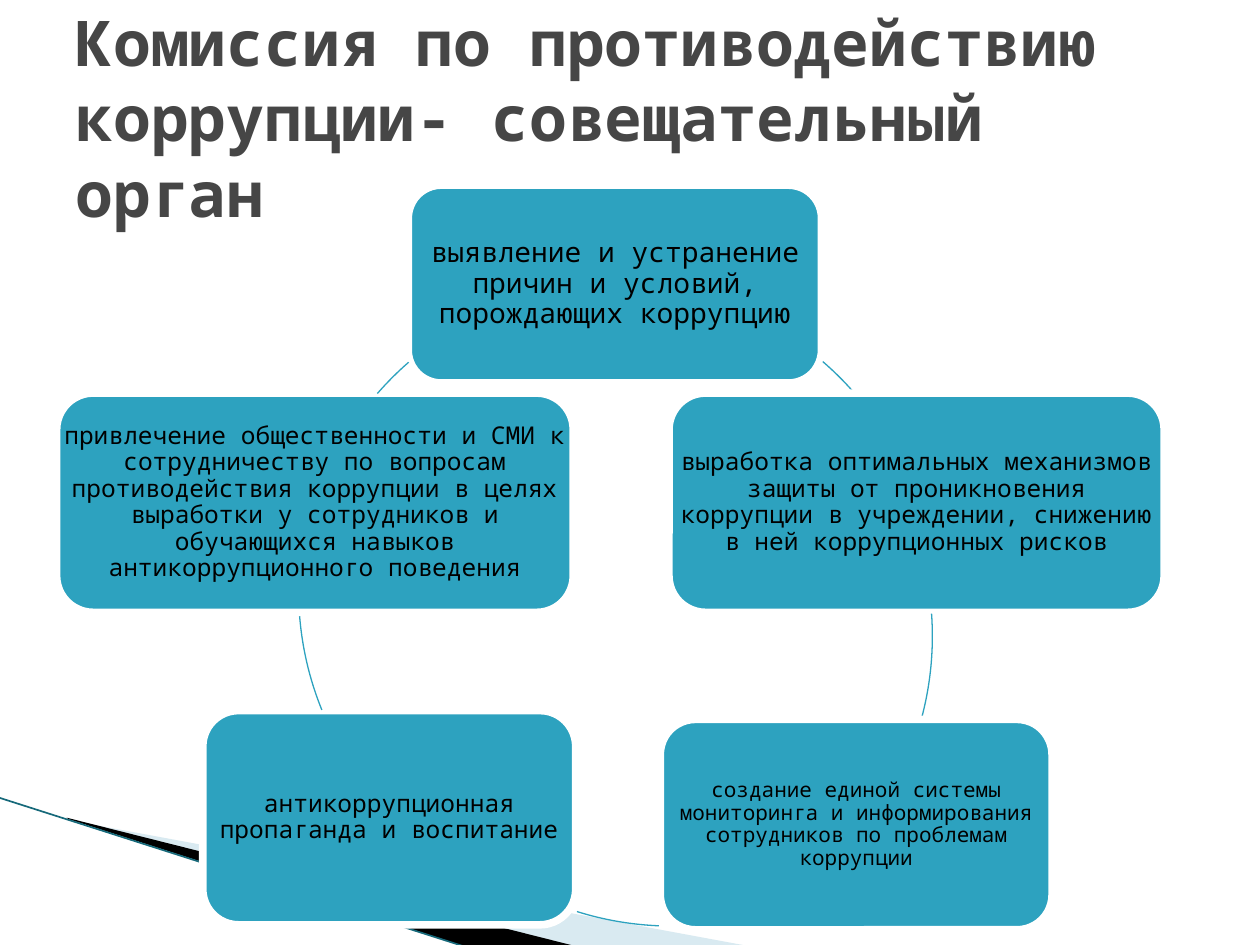
from lxml.etree import SubElement
from pptx import Presentation
from pptx.dml.color import RGBColor
from pptx.enum.shapes import MSO_CONNECTOR, MSO_SHAPE
from pptx.enum.text import MSO_ANCHOR, PP_ALIGN
from pptx.oxml.ns import qn
from pptx.util import Inches, Pt

TEAL = RGBColor(0x2D, 0xA2, 0xBF)
DEEP_TEAL = RGBColor(0x16, 0x69, 0x7A)
PALE_BLUE = RGBColor(0xA0, 0xCB, 0xDC)
GREY = RGBColor(0x46, 0x46, 0x46)
BLACK = RGBColor(0, 0, 0)
WHITE = RGBColor(0xFF, 0xFF, 0xFF)

COLUMNS, ROWS = 100, 75
CELL = Inches(0.1)
RING_SIZE = 50.2

WEDGES = [
    ([(5.5, 65.1), (59.5, 75.1), (45.6, 75.1), (5.5, 65)], PALE_BLUE, 40),
    ([(5.3, 64.9), (45.7, 75.1), (37.2, 75.2), (5.4, 65)], BLACK, 100),
]

CARDS = [
    ((32.4, 14.7, 32.8, 15.7), 16, 0.7,
     "выявление и устранение причин и условий, порождающих коррупцию"),
    ((53.1, 31.2, 39.3, 17.4), 14, 0.6,
     "выработка оптимальных механизмов защиты от проникновения коррупции "
     "в учреждении, снижению в ней коррупционных рисков"),
    ((52.4, 57.1, 31.1, 16.7), 12, 0.5,
     "создание единой системы мониторинга и информирования "
     "сотрудников по проблемам коррупции"),
    ((16.1, 56.4, 29.6, 17), 14, 0.6,
     "антикоррупционная пропаганда и воспитание"),
    ((4.5, 31.2, 41, 17.4), 14, 0.6,
     "привлечение общественности и СМИ к сотрудничеству по вопросам "
     "противодействия коррупции в целях выработки у сотрудников и "
     "обучающихся навыков антикоррупционного поведения"),
]

ARCS = [
    (23.8, 22.6, 310.8, 318.9),
    (23.8, 25.4, 355.9, 15),
    (28.2, 23.3, 92.3, 107.4),
    (23.7, 21.8, 157.9, 175.9),
    (23.8, 22.6, 221, 229),
]


def cells(*values):
    return [round(value * CELL) for value in values]


def apply(target, values):
    for name, value in values.items():
        setattr(target, name, value)


class SlideBuilder:
    font_name = "Noto Sans Mono"

    def __init__(self, presentation):
        self.slide = presentation.slides.add_slide(presentation.slide_layouts[5])
        self.shapes = self.slide.shapes

    def set_text(self, shape, text, box, inset, size, color, bold, align, spacing):
        frame = shape.text_frame
        frame.text = text
        left, top, width, height = cells(*box)
        apply(shape, {"left": left, "top": top, "width": width, "height": height})
        side, edge = cells(*inset)
        apply(frame, {"word_wrap": True, "vertical_anchor": MSO_ANCHOR.MIDDLE,
                      "margin_left": side, "margin_right": side,
                      "margin_top": edge, "margin_bottom": edge})
        paragraph = frame.paragraphs[0]
        apply(paragraph, {"alignment": align, "line_spacing": spacing})
        font = paragraph.runs[0].font
        apply(font, {"name": self.font_name, "size": Pt(size), "bold": bold})
        font.color.rgb = color

    def title(self, text, box):
        self.set_text(self.shapes.title, text, box, (1, 0.5), 36, GREY, True,
                      PP_ALIGN.LEFT, 1.0)

    def wedge(self, points, color, opacity):
        corners = [tuple(cells(*point)) for point in points]
        builder = self.shapes.build_freeform(*corners[0])
        builder.add_line_segments(corners[1:], close=True)
        shape = builder.convert_to_shape()
        shape.shadow.inherit = False
        shape.fill.solid()
        shape.fill.fore_color.rgb = color
        shape.line.fill.background()
        if opacity < 100:
            fill = shape._element.spPr.find(qn("a:solidFill"))
            SubElement(fill[0], qn("a:alpha"), val=str(opacity * 1000))

    def line(self, start, end, color, width):
        connector = self.shapes.add_connector(
            MSO_CONNECTOR.STRAIGHT, *cells(*start, *end))
        connector.line.color.rgb = color
        connector.line.width = Pt(width)
        SubElement(connector._element.spPr, qn("a:effectLst"))

    def arc(self, left, top, start, end):
        shape = self.shapes.add_shape(
            MSO_SHAPE.ARC, *cells(left, top, RING_SIZE, RING_SIZE))
        shape.shadow.inherit = False
        shape.fill.background()
        shape.line.color.rgb = TEAL
        shape.line.width = Pt(0.75)
        for index, angle in enumerate((start, end)):
            shape.adjustments[index] = angle * 0.6

    def card(self, box, size, inset, text):
        shape = self.shapes.add_shape(MSO_SHAPE.ROUNDED_RECTANGLE, *cells(*box))
        shape.shadow.inherit = False
        shape.fill.solid()
        shape.fill.fore_color.rgb = TEAL
        shape.line.color.rgb = WHITE
        shape.line.width = Pt(4.33)
        label = self.shapes.add_textbox(*cells(*box))
        self.set_text(label, text, box, (inset, inset), size, BLACK, False,
                      PP_ALIGN.CENTER, 0.9)


def main():
    presentation = Presentation()
    apply(presentation, {"slide_width": COLUMNS * CELL, "slide_height": ROWS * CELL})
    builder = SlideBuilder(presentation)
    for wedge in WEDGES:
        builder.wedge(*wedge)
    builder.line((-0.1, 63.3), (37.1, 75.2), DEEP_TEAL, 0.95)
    builder.title("Комиссия по противодействию коррупции- совещательный орган",
                  (5, 3, 90, 12.5))
    for card, arc in zip(CARDS, ARCS):
        builder.card(*card)
        builder.arc(*arc)
    presentation.save("out.pptx")


if __name__ == "__main__":
    main()
